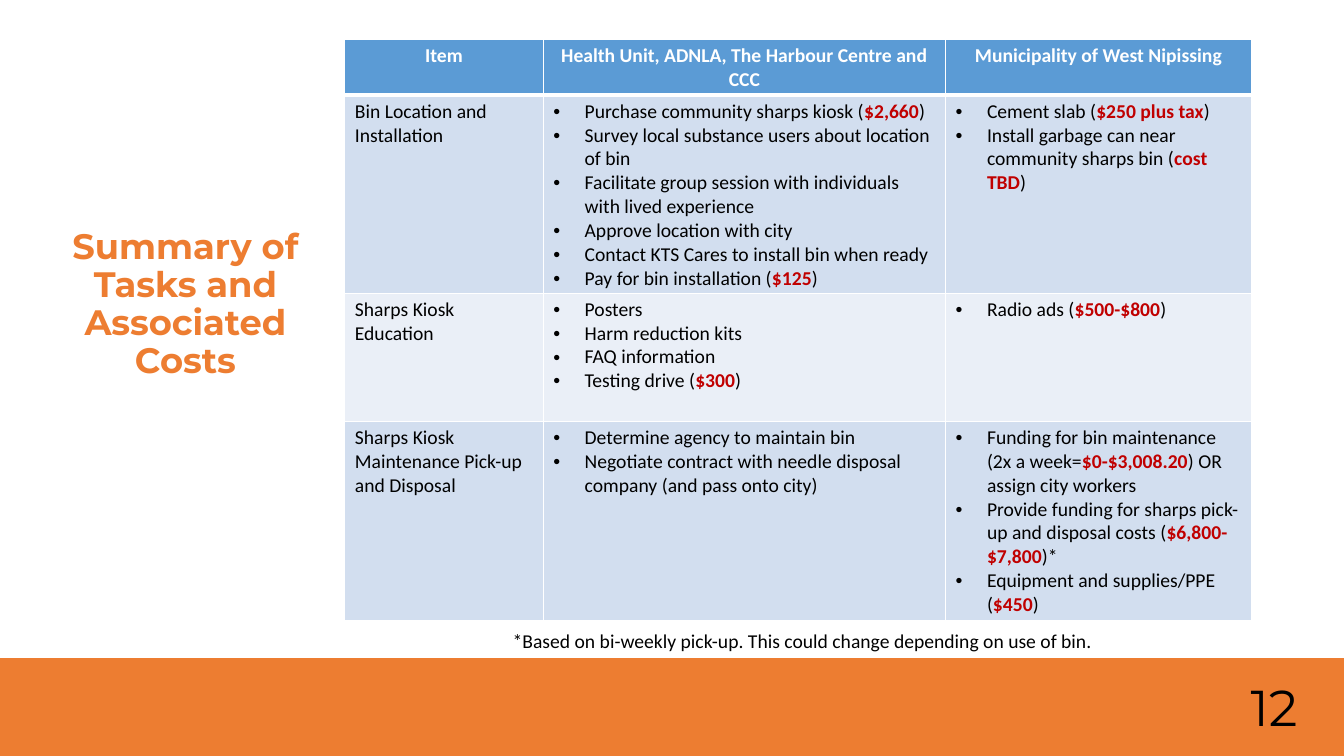
from pptx import Presentation
from pptx.dml.color import RGBColor
from pptx.enum.shapes import MSO_SHAPE
from pptx.enum.text import MSO_ANCHOR, PP_ALIGN
from pptx.oxml.ns import qn
from pptx.util import Cm, Pt
from lxml.etree import Element, SubElement

HUES = {
    "orange": "ED7D31",
    "blue": "5B9BD5",
    "mid": "D2DEEF",
    "pale": "EAEFF7",
    "red": "C00000",
    "black": "000000",
    "white": "FFFFFF",
}
COLS = [5, 10.14, 7.71]
ROWS = [1.41, 4.99, 3.23, 5.01]
HEADS = ["Item", "Health Unit, ADNLA, The Harbour Centre and CCC",
         "Municipality of West Nipissing"]
# Costs stand between bars.
TASKS = [
    ("Bin Location and Installation",
     ["Purchase community sharps kiosk (|$2,660|)",
      "Survey local substance users about location of bin",
      "Facilitate group session with individuals with lived experience",
      "Approve location with city",
      "Contact KTS Cares to install bin when ready",
      "Pay for bin installation (|$125|)"],
     ["Cement slab (|$250 plus tax|)",
      "Install garbage can near community sharps bin (|cost TBD|)"]),
    ("Sharps Kiosk Education",
     ["Posters", "Harm reduction kits", "FAQ information",
      "Testing drive (|$300|)"],
     ["Radio ads (|$500-$800|)"]),
    ("Sharps Kiosk Maintenance Pick-up and Disposal",
     ["Determine agency to maintain bin",
      "Negotiate contract with needle disposal company (and pass onto city)"],
     ["Funding for bin maintenance (2x a week=|$0-$3,008.20|) OR assign city workers",
      "Provide funding for sharps pick-up and disposal costs (|$6,800-$7,800|)*",
      "Equipment and supplies/PPE (|$450|)"]),
]


def hue(name):
    return RGBColor.from_string(HUES[name])


def style(run, size, face="Calibri", tint="black", bold=False):
    font = run.font
    font.size, font.name, font.bold = Pt(size), face, bold
    font.color.rgb = hue(tint)


def add_text(slide, box, text, size, face="Calibri", tint="black", bold=False):
    frame = slide.shapes.add_textbox(*map(Cm, box)).text_frame
    frame.word_wrap = True
    frame.text = text
    style(frame.paragraphs[0].runs[0], size, face, tint, bold)
    return frame


def add_title(slide):
    frame = add_text(slide, (0.66, 5.84, 8.03, 3.68),
                     "Summary of Tasks and Associated Costs",
                     25.2, "Montserrat", "orange", True)
    frame.vertical_anchor = MSO_ANCHOR.MIDDLE
    para = frame.paragraphs[0]
    para.alignment = PP_ALIGN.CENTER
    para.line_spacing = 0.9


def add_bar(slide):
    bar = slide.shapes.add_shape(MSO_SHAPE.RECTANGLE, 0, Cm(16.59), Cm(33.87), Cm(2.46))
    bar.shadow.inherit = False
    bar.fill.solid()
    bar.fill.fore_color.rgb = bar.line.color.rgb = hue("orange")
    bar.line.width = Pt(1)


def set_edges(cell, top, base):
    """Draw white borders; top and base are widths in points."""
    props = cell._tc.get_or_add_tcPr()
    for spot, (side, width) in enumerate(zip("LRTB", (1, 1, top, base))):
        line = Element(qn("a:ln" + side), w=str(Pt(width)))
        fill = SubElement(line, qn("a:solidFill"))
        SubElement(fill, qn("a:srgbClr"), val=HUES["white"])
        props.insert(spot, line)


def add_dot(para):
    props = para._p.get_or_add_pPr()
    props.set("marL", str(Cm(0.79)))
    props.set("indent", str(Cm(-0.79)))
    SubElement(props, qn("a:buFont"), typeface="Arial")
    SubElement(props, qn("a:buChar"), char="•")


def fill_cell(cell, lines, shade, head=False, dots=False):
    cell.fill.solid()
    cell.fill.fore_color.rgb = hue(shade)
    cell.margin_top, cell.margin_bottom = Cm(0.11), Cm(0.05)
    frame = cell.text_frame
    for spot, line in enumerate(lines):
        para = frame.add_paragraph() if spot else frame.paragraphs[0]
        for part, text in enumerate(line.split("|")):
            run = para.add_run()
            run.text = text
            cost = part % 2 == 1
            tint = "white" if head else "red" if cost else "black"
            style(run, 14, tint=tint, bold=head or cost)
        if head:
            para.alignment = PP_ALIGN.CENTER
        if dots:
            add_dot(para)


def add_tasks(slide):
    table = slide.shapes.add_table(len(ROWS), len(COLS), Cm(8.69), Cm(0.99),
                                   Cm(sum(COLS)), Cm(sum(ROWS))).table
    for col, width in zip(table.columns, COLS):
        col.width = Cm(width)
    for row, height in zip(table.rows, ROWS):
        row.height = Cm(height)
    for col, text in enumerate(HEADS):
        fill_cell(table.cell(0, col), [text], "blue", head=True)
        set_edges(table.cell(0, col), 1, 3)
    for row, (item, *lists) in enumerate(TASKS, 1):
        shade = "mid" if row % 2 else "pale"
        for col, lines in enumerate([[item], *lists]):
            cell = table.cell(row, col)
            fill_cell(cell, lines, shade, dots=col > 0)
            set_edges(cell, 3 if row == 1 else 1, 1)


def main():
    deck = Presentation()
    deck.slide_width, deck.slide_height = Cm(33.87), Cm(19.05)
    slide = deck.slides.add_slide(deck.slide_layouts[6])
    add_title(slide)
    add_bar(slide)
    add_text(slide, (31.27, 16.92, 2.6, 1.8), "12", 36, "Montserrat")
    add_tasks(slide)
    add_text(slide, (12.67, 15.72, 18.87, 0.86),
             "*Based on bi-weekly pick-up. This could change depending on use of bin.", 14)
    deck.save("out.pptx")


if __name__ == "__main__":
    main()
